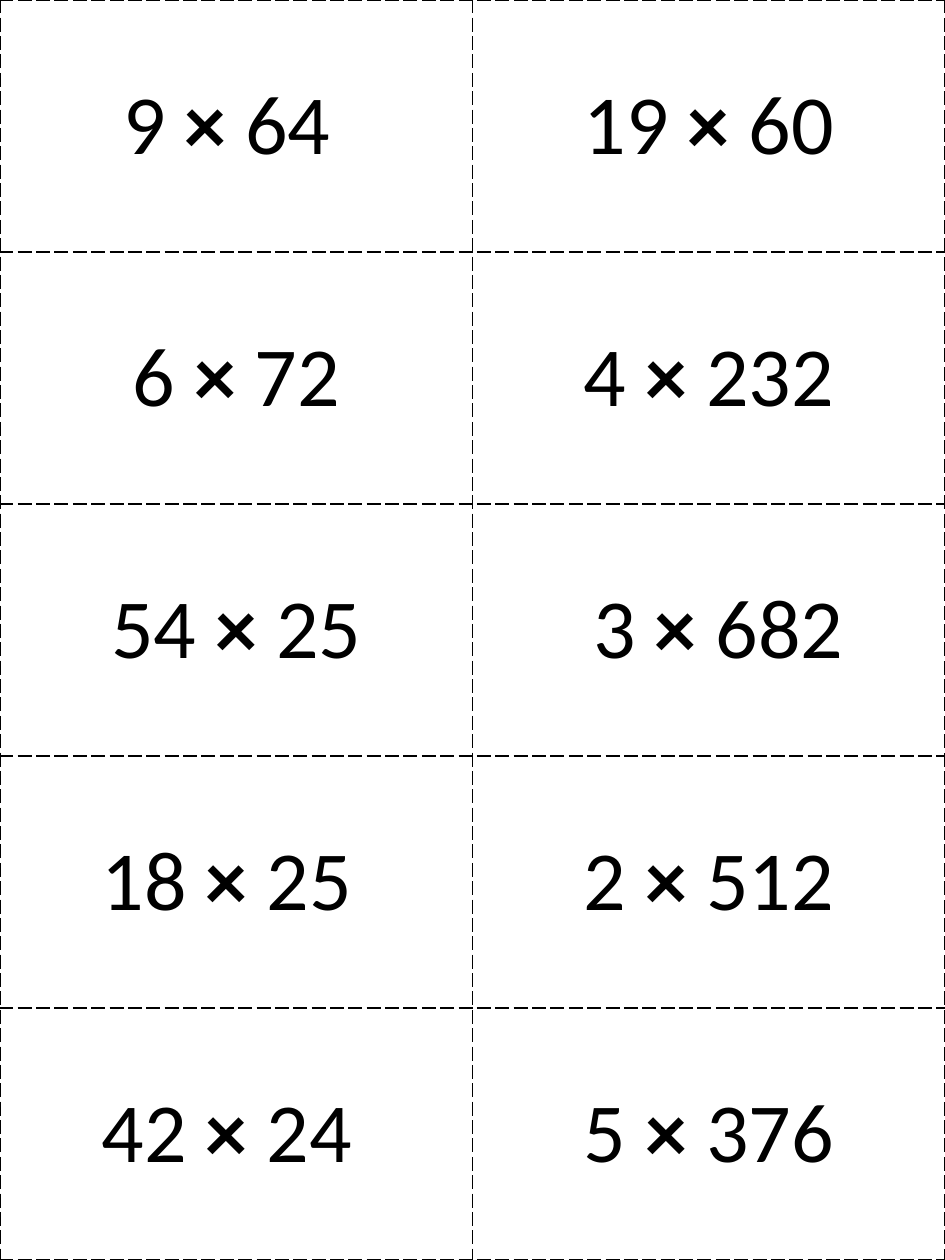
import dataclasses

import pptx
import pptx.dml.color
import pptx.enum.text
import pptx.oxml
import pptx.oxml.ns
import pptx.util


@dataclasses.dataclass(frozen=True)
class Theme:
    ink: str = "000000"
    font: str = "Calibri"
    size: int = 48
    line: float = 1
    dash: str = "lgDash"


THEME = Theme()
WIDTH, HEIGHT = pptx.util.Inches(7.5), pptx.util.Inches(10)
SIGN = "×"
CARDS = [
    ("9 × 64 ", "19 × 60"),
    ("6 × 72", "4 × 232"),
    ("54 × 25", " 3 × 682"),
    ("18 × 25 ", "2 × 512"),
    ("42 × 24 ", "5 × 376"),
]


def add_run(para, text, bold=False, size=THEME.size, color=THEME.ink):
    run = para.add_run()
    run.text = text
    run.font.name = THEME.font
    run.font.size = pptx.util.Pt(size)
    run.font.bold = bold
    run.font.color.rgb = pptx.dml.color.RGBColor.from_string(color)


def add_border(cell):
    """Draw a dashed cutting line on all four sides of a cell."""
    props = cell._tc.get_or_add_tcPr()
    width = pptx.util.Pt(THEME.line)
    for side in "LRTB":
        props.append(pptx.oxml.parse_xml(
            f'<a:ln{side} {pptx.oxml.ns.nsdecls("a")} w="{width}">'
            f'<a:solidFill><a:srgbClr val="{THEME.ink}"/></a:solidFill>'
            f'<a:prstDash val="{THEME.dash}"/></a:ln{side}>'))


def fill_card(cell, sum_text):
    cell.margin_left = cell.margin_right = pptx.util.Inches(0.07)
    cell.margin_top = cell.margin_bottom = 0
    cell.vertical_anchor = pptx.enum.text.MSO_ANCHOR.MIDDLE
    add_border(cell)
    cell.fill.background()
    para = cell.text_frame.paragraphs[0]
    para.alignment = pptx.enum.text.PP_ALIGN.CENTER
    for part in sum_text.partition(SIGN):
        add_run(para, part, bold=part == SIGN)


def add_cards(slide, cards):
    rows, cols = len(cards), len(cards[0])
    table = slide.shapes.add_table(rows, cols, 0, 0, WIDTH, HEIGHT).table
    table.first_row = table.horz_banding = False
    for row, sums in enumerate(cards):
        for col, sum_text in enumerate(sums):
            fill_card(table.cell(row, col), sum_text)


def main():
    deck = pptx.Presentation()
    deck.slide_width, deck.slide_height = WIDTH, HEIGHT
    slide = deck.slides.add_slide(deck.slide_layouts[6])
    add_cards(slide, CARDS)
    deck.save("out.pptx")


if __name__ == "__main__":
    main()
